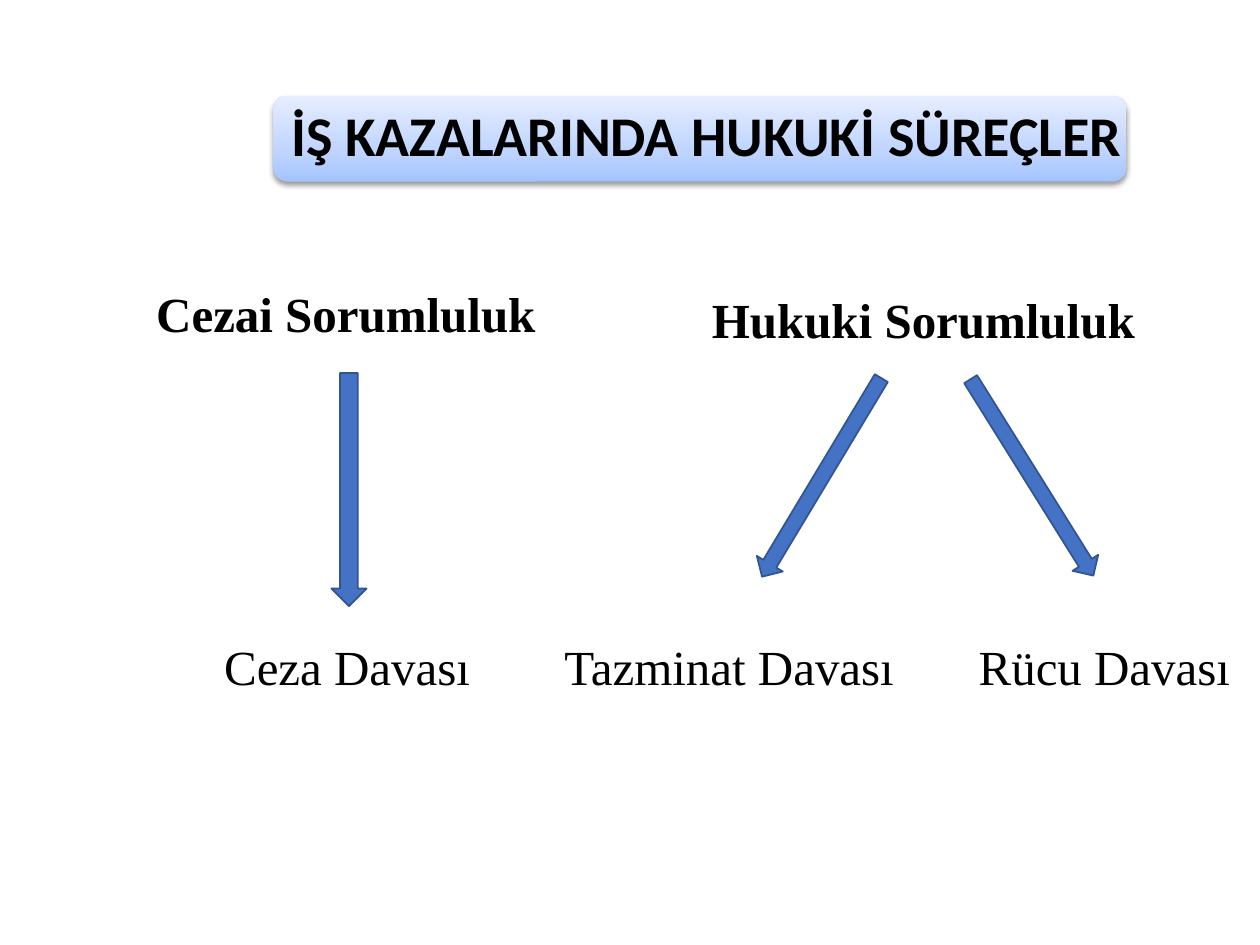
from lxml import etree
from pptx import Presentation
from pptx.dml.color import RGBColor
from pptx.enum.shapes import MSO_SHAPE
from pptx.enum.text import MSO_ANCHOR, MSO_AUTO_SIZE, PP_ALIGN
from pptx.oxml import parse_xml
from pptx.util import Cm, Pt

ROUND_RECT, DOWN_ARROW = MSO_SHAPE.ROUNDED_RECTANGLE, MSO_SHAPE.DOWN_ARROW
MIDDLE, LEFT = MSO_ANCHOR.MIDDLE, PP_ALIGN.LEFT
NO_FIT, GROW = MSO_AUTO_SIZE.NONE, MSO_AUTO_SIZE.SHAPE_TO_FIT_TEXT
A_NS = "http://schemas.openxmlformats.org/drawingml/2006/main"

THEME = {
    "title_font": "Calibri", "title_size": 32,
    "label_font": "Times New Roman", "label_size": 28,
    "text": "000000", "arrow": "4472C4", "arrow_line": "325491",
    "banner": [(0, "A4C4FF"), (35, "BFD4FF"), (100, "E6EEFF")],
}

# Boxes are left, top, width, height in cm.
TITLE = "İŞ KAZALARINDA HUKUKİ SÜREÇLER"
BANNER_BOX = (5.51, 1.93, 17.2, 1.73)
TITLE_BOX = (5.59, 2.01, 17.7, 1.57)
HEADING_TOP, CASE_TOP, LABEL_HEIGHT = 5.72, 12.7, 1.45
HEADINGS = [  # text, left, width, height, line spacing
    ("Cezai Sorumluluk", 2.9, 8.26, 1.35, 0.9),
    ("Hukuki Sorumluluk", 14.1, 9.14, LABEL_HEIGHT, 1.0),
]
CASES = [  # text, left, width
    ("Ceza Davası", 4.27, 5.51),
    ("Tazminat Davası", 11.13, 7.21),
    ("Rücu Davası", 19.48, 5.64),
]
ARROWS = [  # box, rotation in degrees
    ((6.68, 7.52, 0.71, 4.7), 0),
    ((16.26, 7.29, 0.61, 4.67), 31),
    ((20.5, 7.29, 0.61, 4.67), 328),
]


def rgb(value):
    return RGBColor.from_string(value)


def cm_box(box):
    return [Cm(v) for v in box]


def style(p, font, size, bold):
    p.alignment = LEFT
    p.font.name, p.font.size, p.font.bold = font, Pt(size), bold
    p.font.color.rgb = rgb(THEME["text"])


def add_banner(slide):
    """Rounded bar with a vertical gradient and a soft shadow."""
    sp = slide.shapes.add_shape(ROUND_RECT, *cm_box(BANNER_BOX))
    sp.line.fill.background()
    sp.fill.gradient()
    sp.fill.gradient_angle = 90
    stops = sp._element.spPr.find(f"{{{A_NS}}}gradFill/{{{A_NS}}}gsLst")
    for old in list(stops):
        stops.remove(old)
    for pos, color in THEME["banner"]:
        gs = etree.SubElement(stops, f"{{{A_NS}}}gs", pos=str(pos * 1000))
        etree.SubElement(gs, f"{{{A_NS}}}srgbClr", val=color)
    sp._element.spPr.append(parse_xml(
        f'<a:effectLst xmlns:a="{A_NS}"><a:outerShdw blurRad="{Pt(3.1)}" '
        f'dist="{Pt(1.6)}" dir="5400000" rotWithShape="0">'
        '<a:srgbClr val="000000"><a:alpha val="38000"/></a:srgbClr>'
        '</a:outerShdw></a:effectLst>'))


def set_title(slide):
    sp = slide.shapes.title
    sp.left, sp.top, sp.width, sp.height = cm_box(TITLE_BOX)
    slide.shapes._spTree.append(sp._element)  # in front of the banner
    tf = sp.text_frame
    tf.text = TITLE
    tf.word_wrap, tf.auto_size, tf.vertical_anchor = True, NO_FIT, MIDDLE
    tf.margin_left = tf.margin_right = tf.margin_top = tf.margin_bottom = Cm(0.28)
    p = tf.paragraphs[0]
    p.line_spacing = 0.9
    style(p, THEME["title_font"], THEME["title_size"], True)


def add_label(slide, text, box, bold, spacing=1.0):
    tf = slide.shapes.add_textbox(*cm_box(box)).text_frame
    tf.text = text
    tf.word_wrap, tf.auto_size = False, GROW
    p = tf.paragraphs[0]
    p.line_spacing = spacing
    style(p, THEME["label_font"], THEME["label_size"], bold)


def add_arrow(slide, box, rotation):
    sp = slide.shapes.add_shape(DOWN_ARROW, *cm_box(box))
    sp.rotation = rotation
    sp.shadow.inherit = False
    sp.fill.solid()
    sp.fill.fore_color.rgb = rgb(THEME["arrow"])
    sp.line.color.rgb = rgb(THEME["arrow_line"])
    sp.line.width = Pt(1)


def main():
    prs = Presentation()
    prs.slide_width, prs.slide_height = Cm(25.4), Cm(19.05)
    slide = prs.slides.add_slide(prs.slide_layouts[5])
    add_banner(slide)
    set_title(slide)
    for text, left, width, height, spacing in HEADINGS:
        add_label(slide, text, (left, HEADING_TOP, width, height), True, spacing)
    for box, rotation in ARROWS:
        add_arrow(slide, box, rotation)
    for text, left, width in CASES:
        add_label(slide, text, (left, CASE_TOP, width, LABEL_HEIGHT), False)
    prs.save("out.pptx")


if __name__ == "__main__":
    main()
